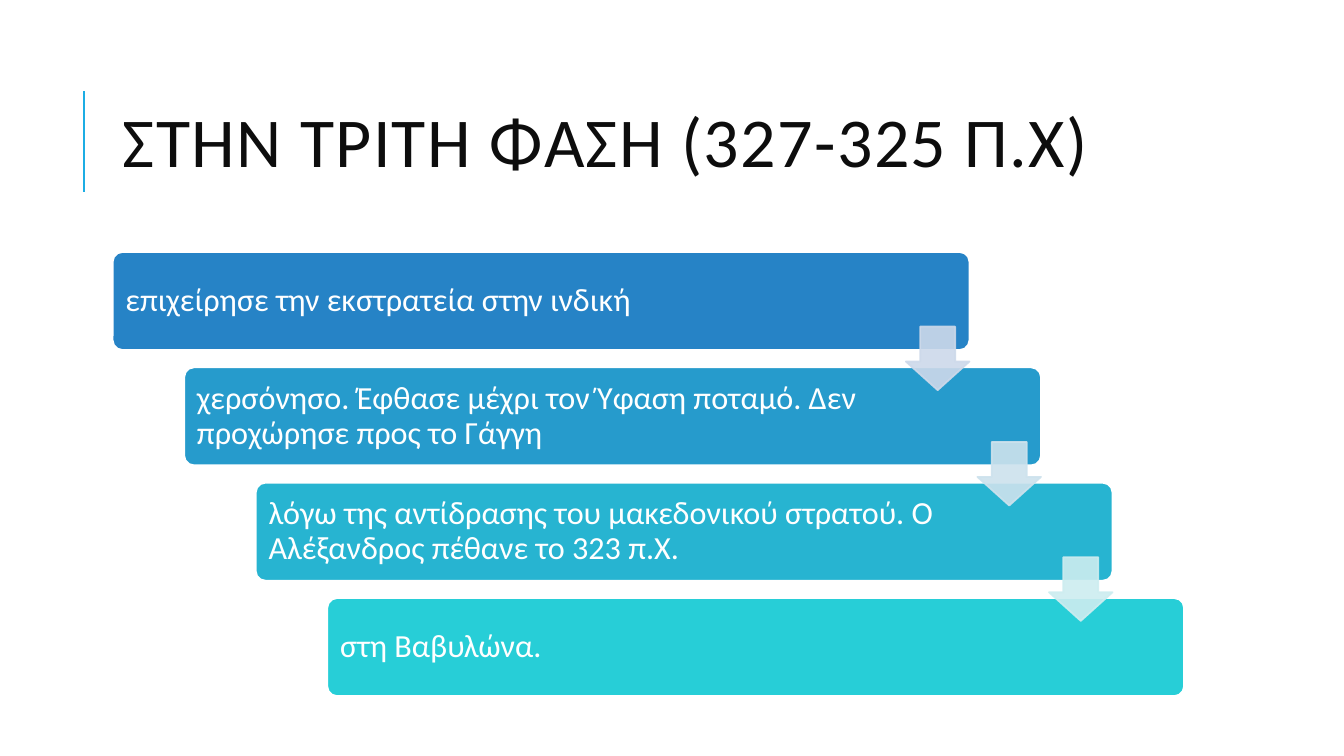
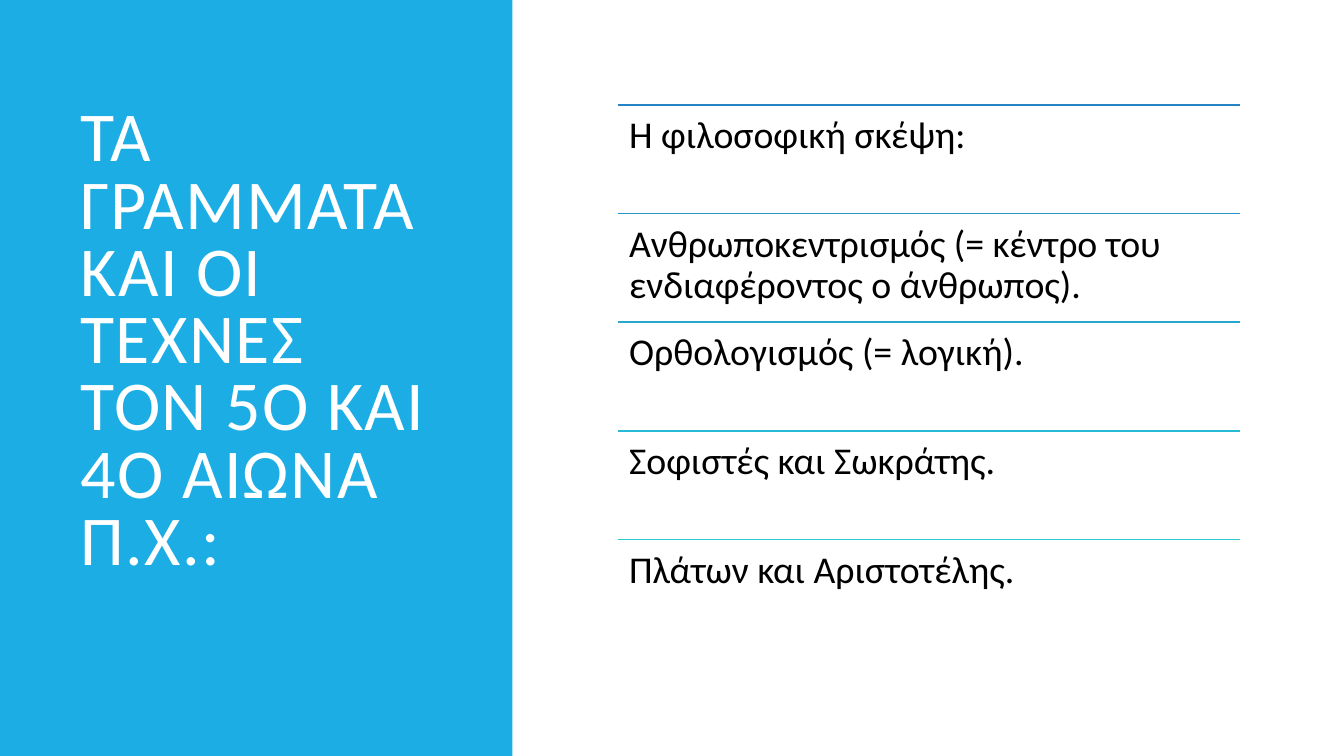
"""Builds two history slides: a staircase of steps and a ruled list."""
from lxml import etree
from pptx import Presentation
from pptx.dml.color import RGBColor
from pptx.enum.shapes import MSO_CONNECTOR, MSO_SHAPE
from pptx.enum.text import MSO_ANCHOR, PP_ALIGN
from pptx.oxml.ns import qn
from pptx.util import Pt

STRAIGHT = MSO_CONNECTOR.STRAIGHT
RECTANGLE = MSO_SHAPE.RECTANGLE
ROUNDED = MSO_SHAPE.ROUNDED_RECTANGLE
DOWN_ARROW = MSO_SHAPE.DOWN_ARROW
TOP, MIDDLE = MSO_ANCHOR.TOP, MSO_ANCHOR.MIDDLE
LEFT = PP_ALIGN.LEFT

ACCENT, WHITE, BLACK, INK = "1CADE4", "FFFFFF", "000000", "0D0D0D"
LINE_WIDTH = 1.25

PHASE_TITLE = "ΣΤΗΝ ΤΡΙΤΗ ΦΑΣΗ (327-325 Π.Χ)"
STEPS = [
    ("επιχείρησε την εκστρατεία στην ινδική", "2683C6"),
    ("χερσόνησο. Έφθασε μέχρι τον Ύφαση ποταμό. Δεν προχώρησε προς το Γάγγη", "269BCC"),
    ("λόγω της αντίδρασης του μακεδονικού στρατού. Ο Αλέξανδρος πέθανε το 323 π.Χ.", "27B4D1"),
    ("στη Βαβυλώνα.", "27CED7"),
]
ARROW_COLORS = ["CDD9EA", "CDE2ED", "CDEDF0"]

ARTS_TITLE = "ΤΑ ΓΡΑΜΜΑΤΑ ΚΑΙ ΟΙ ΤΕΧΝΕΣ ΤΟΝ 5Ο ΚΑΙ 4Ο ΑΙΩΝΑ Π.Χ.:"
IDEAS = [
    ("Η φιλοσοφική σκέψη:", "2683C6"),
    ("Ανθρωποκεντρισμός (= κέντρο του ενδιαφέροντος ο άνθρωπος).", "2695CA"),
    ("Ορθολογισμός (= λογική).", "27A7CE"),
    ("Σοφιστές και Σωκράτης.", "27BAD3"),
    ("Πλάτων και Αριστοτέλης.", "27CED7"),
]

STEP_LEFT, STEP_TOP, STEP_WIDTH, STEP_HEIGHT = 80.5, 180, 612, 70
STEP_SHIFT, STEP_PITCH = 51.1, 82.4
ARROW_SIZE, ARROW_DROP = 45.4, 53.3
IDEA_LEFT, IDEA_TOP, IDEA_WIDTH, IDEA_PITCH = 441.4, 74.9, 444.2, 77.6


def rgb(color):
    return RGBColor.from_string(color)


def write(shape, text, size, color, anchor=MIDDLE, margins=(7.2, 3.6, 7.2, 3.6),
          leading=0.9, tracking=0):
    frame = shape.text_frame
    left, top, right, bottom = margins
    frame_format = {
        "word_wrap": True, "vertical_anchor": anchor,
        "margin_left": Pt(left), "margin_top": Pt(top),
        "margin_right": Pt(right), "margin_bottom": Pt(bottom),
    }
    paragraph = frame.paragraphs[0]
    run = paragraph.add_run()
    run.text = text
    formats = [
        (frame, frame_format),
        (paragraph, {"alignment": LEFT, "line_spacing": leading}),
        (run.font, {"name": "Calibri", "size": Pt(size)}),
    ]
    for target, values in formats:
        for name, value in values.items():
            setattr(target, name, value)
    run.font.color.rgb = rgb(color)
    if tracking:
        run.font._element.set("spc", str(tracking * 100))


def add_text(slide, box, text, size, color, **options):
    write(slide.shapes.add_textbox(*map(Pt, box)), text, size, color, **options)


def add_title(slide, box, text, color):
    add_text(slide, box, text, 50, color, leading=0.8, tracking=1)


def add_block(slide, kind, box, fill, outline=None, adjustments=(), opacity=None):
    block = slide.shapes.add_shape(kind, *map(Pt, box))
    block.shadow.inherit = False
    block.fill.solid()
    block.fill.fore_color.rgb = rgb(fill)
    if outline:
        block.line.color.rgb = rgb(outline)
        block.line.width = Pt(LINE_WIDTH)
    else:
        block.line.fill.background()
    for index, value in enumerate(adjustments):
        block.adjustments[index] = value
    if opacity:
        for color in block._element.spPr.iter(qn("a:srgbClr")):
            etree.SubElement(color, qn("a:alpha")).set("val", str(opacity * 1000))
    return block


def add_rule(slide, start, end, color, width=LINE_WIDTH):
    rule = slide.shapes.add_connector(STRAIGHT, *map(Pt, (*start, *end)))
    rule.line.color.rgb = rgb(color)
    rule.line.width = Pt(width)
    etree.SubElement(rule._element.spPr, qn("a:effectLst"))


def build_phase(slide):
    add_rule(slide, (60, 137), (60, 65), ACCENT, 1.5)
    add_title(slide, (80.5, 46, 765.5, 118), PHASE_TITLE, INK)
    corners = [(STEP_LEFT + i * STEP_SHIFT, STEP_TOP + i * STEP_PITCH)
               for i in range(len(STEPS))]
    for (left, top), (text, fill) in zip(corners, STEPS):
        step = add_block(slide, ROUNDED, (left, top, STEP_WIDTH, STEP_HEIGHT),
                         fill, WHITE, [0.1])
        write(step, text, 23, WHITE, margins=(7.2, 7.2, 103, 7.2))
    for (left, top), color in zip(corners, ARROW_COLORS):
        box = (left + STEP_WIDTH - ARROW_SIZE, top + ARROW_DROP, ARROW_SIZE, ARROW_SIZE)
        add_block(slide, DOWN_ARROW, box, color, color, [0.55, 0.45], 90)


def build_arts(slide):
    add_block(slide, RECTANGLE, (0, 0, 366, 540), ACCENT)
    add_title(slide, (50.4, 50.4, 269.3, 390), ARTS_TITLE, WHITE)
    for index, (text, color) in enumerate(IDEAS):
        top = IDEA_TOP + index * IDEA_PITCH
        add_rule(slide, (IDEA_LEFT, top), (IDEA_LEFT + IDEA_WIDTH, top), color)
        add_text(slide, (IDEA_LEFT, top, IDEA_WIDTH, IDEA_PITCH), text, 27, BLACK,
                 anchor=TOP, margins=(8, 8, 8, 8))


def main():
    deck = Presentation()
    deck.slide_width, deck.slide_height = Pt(960), Pt(540)
    for build in (build_phase, build_arts):
        build(deck.slides.add_slide(deck.slide_layouts[6]))
    deck.save("out.pptx")


if __name__ == "__main__":
    main()
